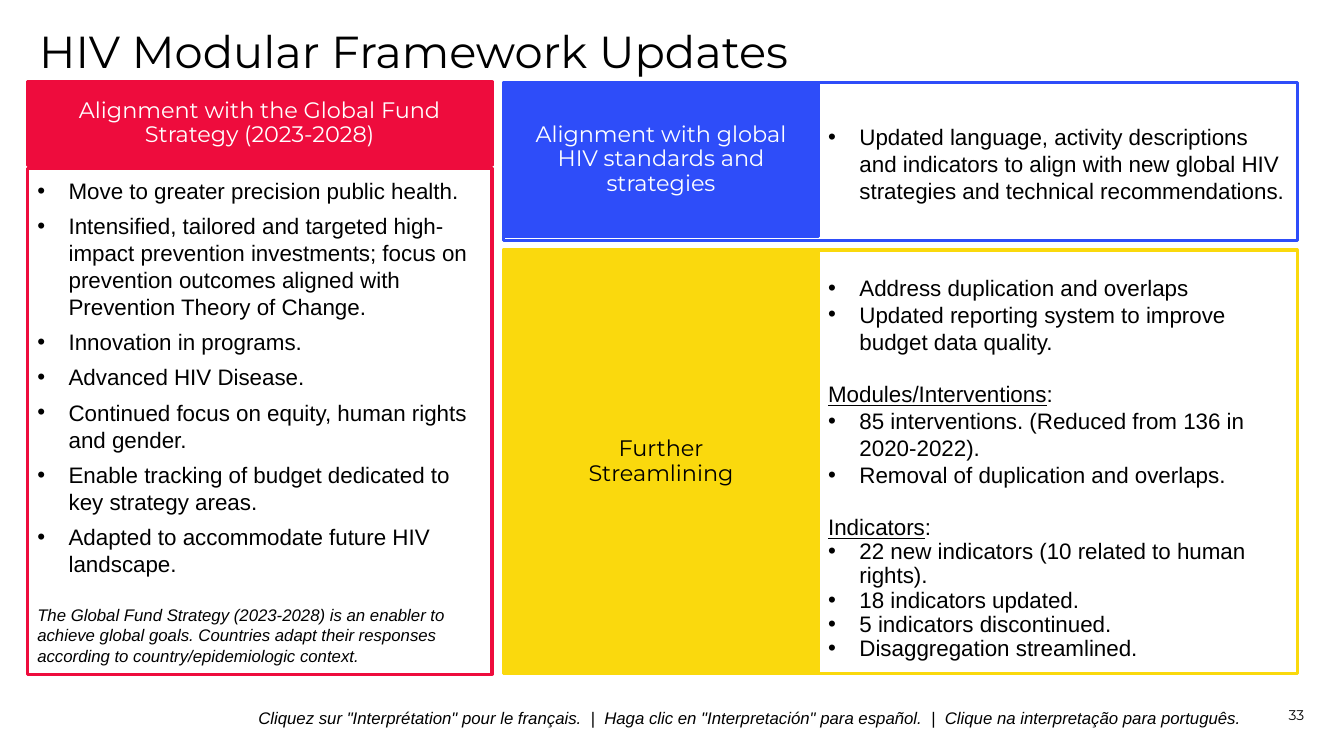
from lxml.etree import SubElement
from pptx import Presentation
from pptx.dml.color import RGBColor
from pptx.enum.shapes import MSO_SHAPE
from pptx.enum.text import MSO_ANCHOR, PP_ALIGN
from pptx.oxml.ns import qn
from pptx.util import Cm, Pt

RED, BLUE, YELLOW = "EE0C3D", "2E4DF9", "FAD90D"
BLACK, WHITE = "000000", "FFFFFF"
HEADING_FONT, BODY_FONT = "Montserrat", "Arial"

RIGHT_X, RIGHT_W, LABEL_W = 12.7, 19.99, 7.92

STRATEGY_POINTS = [
    "Move to greater precision public health.",
    "Intensified, tailored and targeted high-impact prevention investments; "
    "focus on prevention outcomes aligned with Prevention Theory of Change.",
    "Innovation in programs.",
    "Advanced HIV Disease.",
    "Continued focus on equity, human rights and gender.",
    "Enable tracking of budget dedicated to key strategy areas.",
    "Adapted to accommodate future HIV landscape.",
]
STRATEGY_NOTE = (
    "The Global Fund Strategy (2023-2028) is an enabler to achieve global goals. "
    "Countries adapt their responses according to country/epidemiologic context."
)
STANDARDS_POINTS = [
    "Updated language, activity descriptions and indicators to align with new "
    "global HIV strategies and technical recommendations.",
]
# Subheading, bullets, line spacing of the bullets
STREAMLINING = [
    (None, ["Address duplication and overlaps",
            "Updated reporting system to improve budget data quality."], 1.0),
    ("Modules/Interventions", ["85 interventions. (Reduced from 136 in 2020-2022).",
                               "Removal of duplication and overlaps."], 1.0),
    ("Indicators", ["22 new indicators (10 related to human rights).",
                    "18 indicators updated.",
                    "5 indicators discontinued.",
                    "Disaggregation streamlined."], 0.9),
]
LANGUAGES = (
    'Cliquez sur "Interprétation" pour le français.  |  '
    'Haga clic en "Interpretación" para español.  |  '
    "Clique na interpretação para português."
)


def rgb(color):
    return RGBColor.from_string(color)


def add_run(p, text, size=16, font=BODY_FONT, color=BLACK, italic=False, underline=False):
    r = p.add_run()
    r.text = text
    r.font.size = Pt(size)
    r.font.name = font
    r.font.color.rgb = rgb(color)
    r.font.italic = italic
    r.font.underline = underline


def next_paragraph(tf):
    """Return the unused first paragraph of the frame, or else a new one."""
    first = tf.paragraphs[0]
    return tf.add_paragraph() if first.runs else first


def add_bullets(tf, points, after=0, line_spacing=1.0):
    for point in points:
        p = next_paragraph(tf)
        p.space_after = Pt(after)
        p.line_spacing = line_spacing
        pPr = p._p.get_or_add_pPr()
        pPr.set("marL", str(Cm(0.79)))
        pPr.set("indent", str(-Cm(0.79)))
        SubElement(pPr, qn("a:buFont"), typeface="Arial")
        SubElement(pPr, qn("a:buChar"), char="•")
        add_run(p, point)


def add_text(shapes, x, y, w, h, anchor=MSO_ANCHOR.TOP, inset=True):
    tf = shapes.add_textbox(Cm(x), Cm(y), Cm(w), Cm(h)).text_frame
    tf.word_wrap = True
    tf.vertical_anchor = anchor
    if not inset:
        tf.margin_left = tf.margin_right = tf.margin_top = tf.margin_bottom = 0
    return tf


def add_box(shapes, x, y, w, h, color, filled=False):
    sp = shapes.add_shape(MSO_SHAPE.RECTANGLE, Cm(x), Cm(y), Cm(w), Cm(h))
    sp.shadow.inherit = False
    sp.line.color.rgb = rgb(color)
    sp.line.width = Pt(2.25)
    if filled:
        sp.fill.solid()
        sp.fill.fore_color.rgb = rgb(color)
    else:
        sp.fill.background()
    return sp


def add_label(shapes, x, y, w, h, color, lines, text_color=WHITE):
    tf = add_box(shapes, x, y, w, h, color, filled=True).text_frame
    tf.word_wrap = True
    tf.vertical_anchor = MSO_ANCHOR.MIDDLE
    p = tf.paragraphs[0]
    p.alignment = PP_ALIGN.CENTER
    p.line_spacing = 0.9
    for i, line in enumerate(lines):
        if i:
            p.add_line_break()
        add_run(p, line, font=HEADING_FONT, color=text_color)


def add_strategy_card(s):
    shapes = s.shapes.add_group_shape().shapes
    x, w = 0.69, 11.71
    add_box(shapes, x, 4.24, w, 12.75, RED)
    add_label(shapes, x, 2.06, w, 2.11, RED,
              ["Alignment with the Global Fund Strategy (2023-2028)"])
    tf = add_text(shapes, x, 4.34, w, 12.9)
    add_bullets(tf, STRATEGY_POINTS, after=6)
    p = next_paragraph(tf)
    p.space_before = Pt(14)
    p.space_after = Pt(6)
    add_run(p, STRATEGY_NOTE, size=12, italic=True)


def add_side_card(s, y, h, label_h, color, lines, text_color, text_y, text_h, anchor):
    """Add a framed card with its label at the left; return its text frame."""
    shapes = s.shapes.add_group_shape().shapes
    add_box(shapes, RIGHT_X, y, RIGHT_W, h, color)
    add_label(shapes, RIGHT_X, y, LABEL_W, label_h, color, lines, text_color)
    return add_text(shapes, RIGHT_X + LABEL_W, text_y, RIGHT_W - LABEL_W, text_h, anchor)


def add_streamlining(tf):
    for heading, points, line_spacing in STREAMLINING:
        if heading:
            p = next_paragraph(tf)
            p.space_before = Pt(18.4)
            add_run(p, heading, underline=True)
            add_run(p, ":")
        add_bullets(tf, points, line_spacing=line_spacing)


def main():
    prs = Presentation()
    prs.slide_width, prs.slide_height = Cm(33.87), Cm(19.05)
    s = prs.slides.add_slide(prs.slide_layouts[6])

    p = add_text(s.shapes, 5.51, 17.7, 26.8, 0.76, MSO_ANCHOR.BOTTOM).paragraphs[0]
    p.alignment = PP_ALIGN.CENTER
    add_run(p, LANGUAGES, size=12, italic=True)

    p = add_text(s.shapes, 30.38, 17.22, 2.49, 1.02, MSO_ANCHOR.BOTTOM, inset=False).paragraphs[0]
    p.alignment = PP_ALIGN.RIGHT
    add_run(p, "33", size=10, font=HEADING_FONT)

    p = add_text(s.shapes, 0.99, 0.76, 31.88, 1.3, inset=False).paragraphs[0]
    p.line_spacing = 0.9
    add_run(p, "HIV Modular Framework Updates", size=32, font=HEADING_FONT)

    add_strategy_card(s)
    tf = add_side_card(s, 2.08, 3.99, 3.89, BLUE,
                       ["Alignment with global HIV standards and strategies"], WHITE,
                       2.79, 2.67, MSO_ANCHOR.MIDDLE)
    add_bullets(tf, STANDARDS_POINTS)
    tf = add_side_card(s, 6.3, 10.67, 10.67, YELLOW, ["Further", "Streamlining"], BLACK,
                       6.78, 10.19, MSO_ANCHOR.TOP)
    add_streamlining(tf)

    prs.save("out.pptx")


if __name__ == "__main__":
    main()
